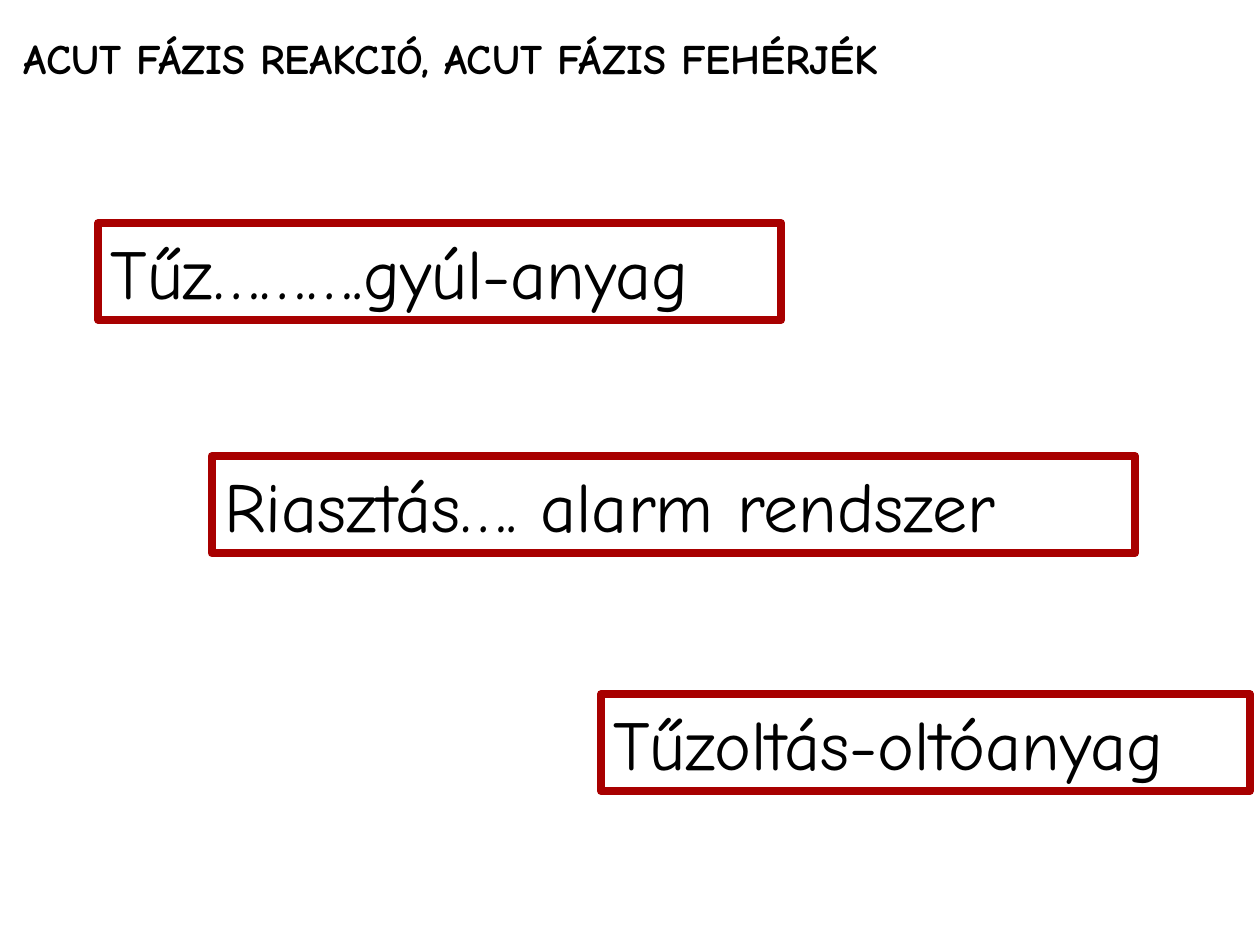
from dataclasses import dataclass

from pptx import Presentation
from pptx.dml.color import RGBColor
from pptx.enum.shapes import MSO_SHAPE
from pptx.enum.text import MSO_ANCHOR, PP_ALIGN
from pptx.util import Inches, Pt

RECTANGLE = MSO_SHAPE.RECTANGLE
TOP = MSO_ANCHOR.TOP
LEFT = PP_ALIGN.LEFT

FONT = "Comic Neue"
BLACK = "000000"
DARK_RED = "A80000"
STAGE_HEIGHT = 0.77


@dataclass
class Stage:
    text: str
    left: float
    top: float
    width: float


STAGES = [
    Stage("Tűz……….gyúl-anyag", 0.78, 1.77, 5.42),
    Stage("Tűzoltás-oltóanyag", 4.77, 5.51, 5.15),
    Stage("Riasztás…. alarm rendszer", 1.68, 3.62, 7.33),
]


def color(value: str) -> RGBColor:
    return RGBColor.from_string(value)


def write(shape, text: str, size: int, bold: bool = False) -> None:
    frame = shape.text_frame
    frame.word_wrap = True
    frame.vertical_anchor = TOP
    paragraph = frame.paragraphs[0]
    paragraph.alignment = LEFT
    run = paragraph.add_run()
    run.text = text
    font_format = {"name": FONT, "size": Pt(size), "bold": bold}
    for attribute, value in font_format.items():
        setattr(run.font, attribute, value)
    run.font.color.rgb = color(BLACK)


def add_stage(slide, stage: Stage) -> None:
    box = slide.shapes.add_shape(
        RECTANGLE, Inches(stage.left), Inches(stage.top),
        Inches(stage.width), Inches(STAGE_HEIGHT),
    )
    box.shadow.inherit = False
    box.fill.background()
    box.line.color.rgb = color(DARK_RED)
    box.line.width = Pt(4.5)
    write(box, stage.text, 40)


def main() -> None:
    presentation = Presentation()
    presentation.slide_width = Inches(10)
    presentation.slide_height = Inches(7.5)
    slide = presentation.slides.add_slide(presentation.slide_layouts[6])

    # Heading
    heading = slide.shapes.add_textbox(
        Inches(0.09), Inches(0.21), Inches(8), Inches(0.5)
    )
    write(heading, "ACUT FÁZIS REAKCIÓ, ACUT FÁZIS FEHÉRJÉK", 24, bold=True)

    # Fire, alarm and extinguishing boxes
    for stage in STAGES:
        add_stage(slide, stage)

    presentation.save("out.pptx")


if __name__ == "__main__":
    main()
